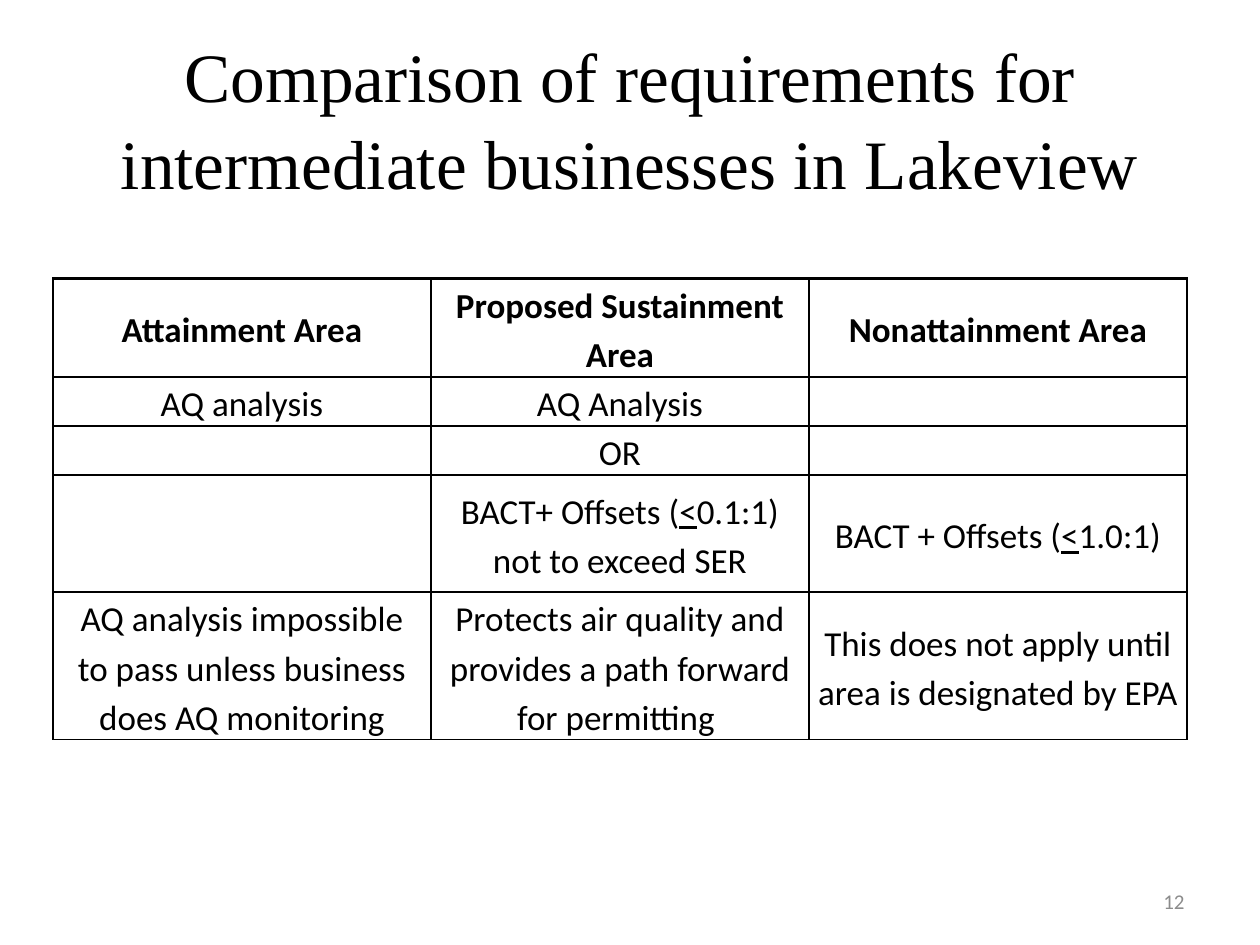
from lxml import etree
from pptx import Presentation
from pptx.dml.color import RGBColor
from pptx.enum.text import MSO_ANCHOR, PP_ALIGN
from pptx.oxml.ns import qn
from pptx.util import Inches, Pt

MID = MSO_ANCHOR.MIDDLE
CENTER, RIGHT = PP_ALIGN.CENTER, PP_ALIGN.RIGHT
HUES = {"ink": "000000", "paper": "FFFFFF", "gray": "8C8C8C"}
WIDE, HIGH = 10, 7.5
HEIGHTS = [0.78, 0.39, 0.39, 0.93, 1.17]
ROWS = [
    [["Attainment Area"], ["Proposed Sustainment Area"], ["Nonattainment Area"]],
    [["AQ analysis"], ["AQ Analysis"], []],
    [[], ["OR"], []],
    [[], ["BACT+ Offsets (", "<", "0.1:1) not to exceed SER"],
     ["BACT + Offsets (", "<", "1.0:1)"]],
    [["AQ analysis impossible to pass unless business does AQ monitoring"],
     ["Protects air quality and provides a path forward for permitting "],
     ["This does not apply until area is designated by EPA"]],
]


def write(frame, parts, size, face="Calibri", hue="ink", align=CENTER, bold=False, gap=1.0):
    """Fill a text frame with runs, underlining each lone less-than sign."""
    frame.word_wrap = True
    para = frame.paragraphs[0]
    para.alignment = align
    para.line_spacing = gap
    for part in parts:
        run = para.add_run()
        run.text = part
        font = run.font
        font.name, font.size, font.bold = face, Pt(size), bold
        font.underline = part == "<"
        font.color.rgb = RGBColor.from_string(HUES[hue])


def label(slide, box, parts, size, **style):
    """Place a vertically centred text box."""
    frame = slide.shapes.add_textbox(*map(Inches, box)).text_frame
    frame.vertical_anchor = MID
    write(frame, parts, size, **style)


def edge(cell, side, width):
    """Draw one solid border of a cell."""
    line = etree.Element(qn(f"a:ln{side}"), w=str(Pt(width)))
    fill = etree.SubElement(line, qn("a:solidFill"))
    etree.SubElement(fill, qn("a:srgbClr"), val=HUES["ink"])
    cell._tc.get_or_add_tcPr().append(line)


def paint(cell, parts, head, heavy):
    """Style one cell and write its text."""
    cell.margin_left = cell.margin_right = Inches(0.07)
    cell.margin_top = cell.margin_bottom = 0
    cell.vertical_anchor = MID
    for side in "LRTB":
        edge(cell, side, 1.5 if side in heavy else 1)
    cell.fill.solid()
    cell.fill.fore_color.rgb = RGBColor.from_string(HUES["paper"])
    write(cell.text_frame, parts, 20, bold=head, gap=1.15)


def grid(slide, box):
    """Build the table of requirements with equal columns."""
    table = slide.shapes.add_table(len(ROWS), len(ROWS[0]), *map(Inches, box)).table
    for col in table.columns:
        col.width = Inches(box[2] / len(ROWS[0]))
    for top, (parts, tall) in enumerate(zip(ROWS, HEIGHTS)):
        table.rows[top].height = Inches(tall)
        heavy = {0: "TB", 1: "T"}.get(top, "")
        for left, text in enumerate(parts):
            paint(table.cell(top, left), text, top == 0, heavy)


def main():
    """Build and save the slide."""
    deck = Presentation()
    deck.slide_width, deck.slide_height = Inches(WIDE), Inches(HIGH)
    slide = deck.slides.add_slide(deck.slide_layouts[6])
    side = WIDE * 0.05
    span = WIDE - 2 * side
    title = "Comparison of requirements for intermediate businesses in Lakeview"
    label(slide, (side, HIGH * 0.04, span, HIGH / 6), [title], 39.6,
          face="Times New Roman", gap=1.04)
    grid(slide, (0.42, 2.21, span, sum(HEIGHTS)))
    label(slide, (7.17, 6.95, 2.33, 0.4), ["12"], 12, hue="gray", align=RIGHT)
    deck.save("out.pptx")


if __name__ == "__main__":
    main()
